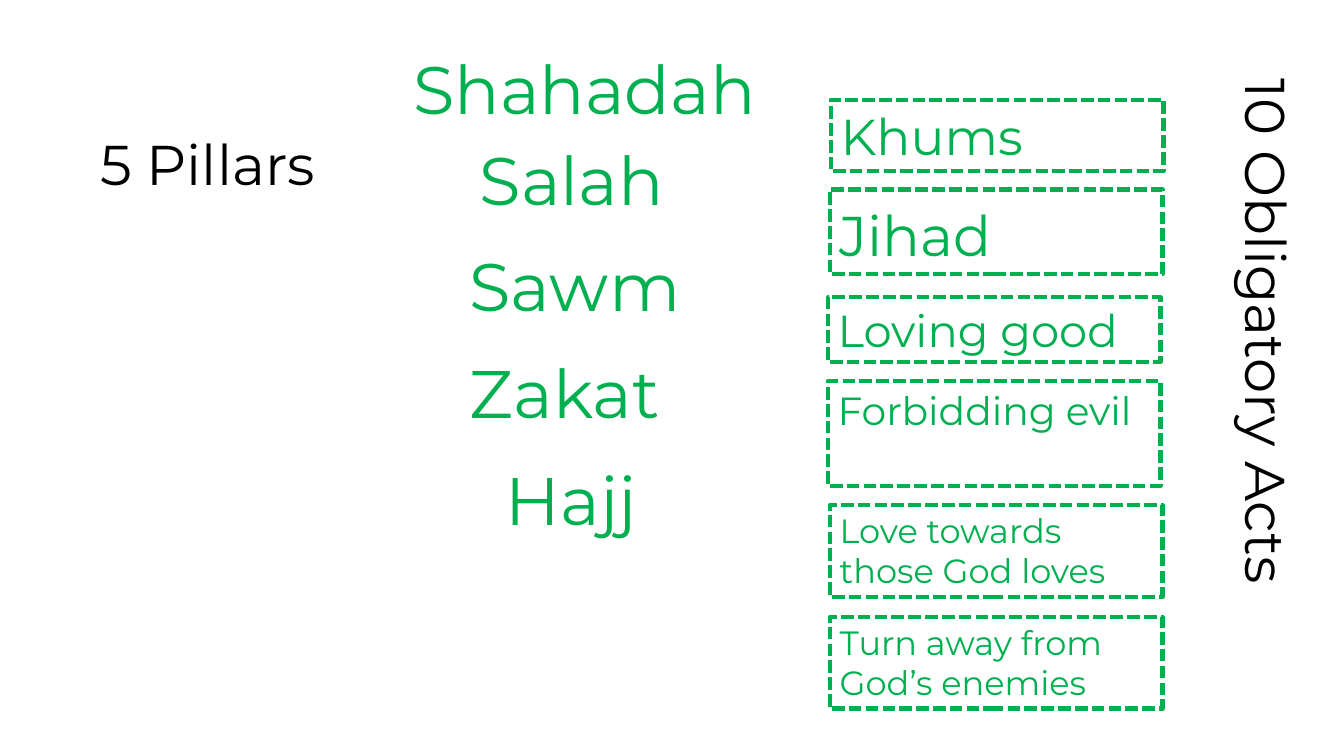
from pptx import Presentation
from pptx.dml.color import RGBColor
from pptx.enum.dml import MSO_LINE
from pptx.enum.shapes import MSO_SHAPE
from pptx.enum.text import MSO_ANCHOR, MSO_AUTO_SIZE, PP_ALIGN
from pptx.util import Inches, Pt

FONT = "Montserrat"
GREEN = "00B050"
BLACK = "000000"

# Shared geometry of the two columns, in inches
PILLAR_WIDTH, PILLAR_HEIGHT = 3.84, 0.91
ACT_WIDTH = 3.3

# Pillars: text, left, top
PILLARS = [
    ("Shahadah", 4.0, 0.42),
    ("Salah", 4.66, 1.32),
    ("Sawm", 4.56, 2.37),
    ("Zakat", 4.56, 3.44),
    ("Hajj", 4.92, 4.5),
]

# Further acts: text, left, top, height, font size, size of a closing space
ACTS = [
    ("Khums", 8.24, 0.99, 0.71, 36, None),
    ("Jihad", 8.23, 1.88, 0.84, 40, 44),
    ("Loving good", 8.21, 2.95, 0.64, 32, None),
    ("Forbidding evil", 8.21, 3.78, 1.04, 28, None),
    ("Love towards those God loves", 8.23, 5.01, 0.91, 24, None),
    ("Turn away from God’s enemies", 8.23, 6.12, 0.91, 24, None),
]


def color(value):
    return RGBColor.from_string(value)


def add_run(paragraph, text, size, fill):
    run = paragraph.add_run()
    run.text = text
    run.font.name = FONT
    run.font.size = Pt(size)
    run.font.color.rgb = color(fill)


def write_text(shape, text, size=48, fill=GREEN, align=PP_ALIGN.LEFT, space_size=None):
    """Fill a shape with one top-anchored, wrapping paragraph."""
    frame = shape.text_frame
    frame.word_wrap = True
    frame.auto_size = MSO_AUTO_SIZE.SHAPE_TO_FIT_TEXT
    frame.vertical_anchor = MSO_ANCHOR.TOP
    paragraph = frame.paragraphs[0]
    paragraph.alignment = align
    add_run(paragraph, text, size, fill)
    if space_size:
        add_run(paragraph, " ", space_size, fill)


def add_label(slide, text, box, rotation=0, **text_format):
    shape = slide.shapes.add_textbox(*map(Inches, box))
    shape.rotation = rotation
    write_text(shape, text, **text_format)


def add_dashed_box(slide, text, box, **text_format):
    shape = slide.shapes.add_shape(MSO_SHAPE.RECTANGLE, *map(Inches, box))
    shape.shadow.inherit = False
    shape.fill.background()
    shape.line.color.rgb = color(GREEN)
    shape.line.width = Pt(3)
    shape.line.dash_style = MSO_LINE.SQUARE_DOT
    write_text(shape, text, **text_format)


def main():
    presentation = Presentation()
    presentation.slide_width = Inches(13.33)
    presentation.slide_height = Inches(7.5)
    slide = presentation.slides.add_slide(presentation.slide_layouts[6])

    # Headings, the second one running down the right edge
    add_label(slide, "5 Pillars", (0.34, 1.24, 2.88, 1.08),
              size=40, fill=BLACK, align=PP_ALIGN.RIGHT)
    add_label(slide, "10 Obligatory Acts", (9.41, 3.15, 6.02, 1.08),
              rotation=90, size=40, fill=BLACK)

    # The five pillars
    for text, left, top in PILLARS:
        add_label(slide, text, (left, top, PILLAR_WIDTH, PILLAR_HEIGHT))

    # The further acts in dashed boxes
    for text, left, top, height, size, space_size in ACTS:
        add_dashed_box(slide, text, (left, top, ACT_WIDTH, height),
                       size=size, space_size=space_size)

    presentation.save("out.pptx")


if __name__ == "__main__":
    main()
